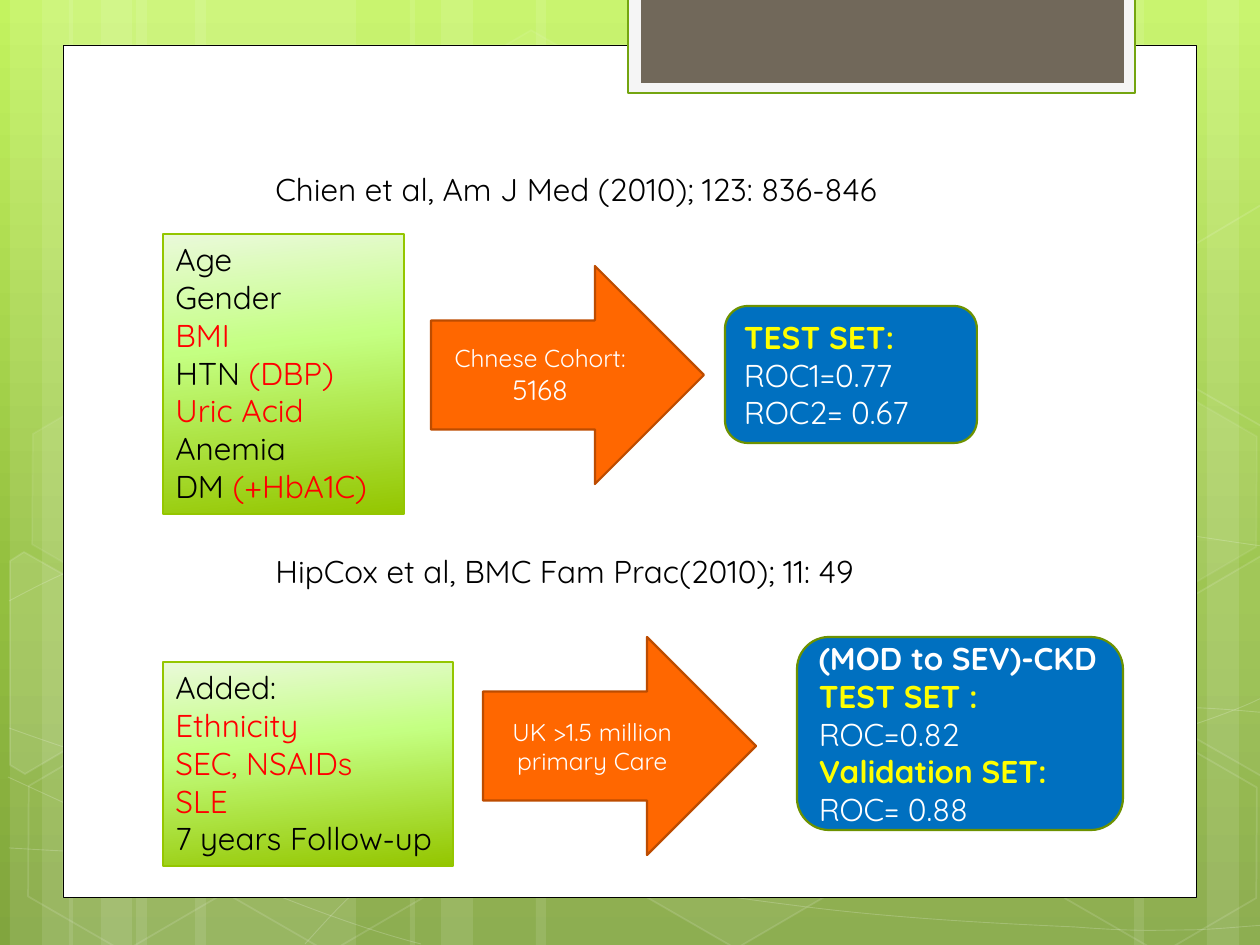
from lxml import etree
from pptx import Presentation
from pptx.dml.color import RGBColor
from pptx.enum.shapes import MSO_SHAPE
from pptx.enum.text import MSO_ANCHOR, MSO_AUTO_SIZE, PP_ALIGN
from pptx.oxml.ns import qn
from pptx.util import Pt

RECT, HEXAGON = MSO_SHAPE.RECTANGLE, MSO_SHAPE.HEXAGON
ARROW, ROUNDED = MSO_SHAPE.RIGHT_ARROW, MSO_SHAPE.ROUNDED_RECTANGLE
TOP, MIDDLE = MSO_ANCHOR.TOP, MSO_ANCHOR.MIDDLE
LEFT, CENTER = PP_ALIGN.LEFT, PP_ALIGN.CENTER
GROW = MSO_AUTO_SIZE.SHAPE_TO_FIT_TEXT

WHITE = RGBColor(0xFF, 0xFF, 0xFF)
BLACK = RGBColor(0x00, 0x00, 0x00)
RED = RGBColor(0xFF, 0x00, 0x00)
YELLOW = RGBColor(0xFF, 0xFF, 0x00)
BLUE = RGBColor(0x00, 0x70, 0xC0)
ORANGE = RGBColor(0xFF, 0x67, 0x00)
RUST = RGBColor(0xBD, 0x4C, 0x00)
LIME = RGBColor(0x94, 0xC6, 0x00)
OLIVE = RGBColor(0x6D, 0x92, 0x00)
GREEN = RGBColor(0x74, 0xA5, 0x10)
TAUPE = RGBColor(0x71, 0x68, 0x5A)
PALE = RGBColor(0xF5, 0xF5, 0xF5)
BACK_STOPS = [(0, "C3F35F"), (62, "93BF3F"), (100, "81A53E")]
BOX_STOPS = [(0, "EAF9DA"), (40, "C4FF82"), (100, "94C600")]
PX = 914400 / 126
FONT = "Quicksand"

prs = Presentation()
prs.slide_width, prs.slide_height = round(1260 * PX), round(945 * PX)
s = prs.slides.add_slide(prs.slide_layouts[6])


def paint(sp, fill=None, line=None, width=1, fill_alpha=100, line_alpha=100):
    sp.shadow.inherit = False
    for part, color, alpha in ((sp.fill, fill, fill_alpha), (sp.line.fill, line, line_alpha)):
        if color is None or alpha == 0:
            part.background()
            continue
        part.solid()
        part.fore_color.rgb = color
        if alpha < 100:
            clr = part._xPr.find(".//" + qn("a:srgbClr"))
            etree.SubElement(clr, qn("a:alpha"), val=str(alpha * 1000))
    if line is not None:
        sp.line.width = Pt(width)


def grade(fill, stops, angle):
    fill.gradient()
    grad = fill._xPr.find(qn("a:gradFill"))
    gs_list = grad.find(qn("a:gsLst"))
    for gs in list(gs_list):
        gs_list.remove(gs)
    for pos, color in stops:
        gs = etree.SubElement(gs_list, qn("a:gs"), pos=str(pos * 1000))
        etree.SubElement(gs, qn("a:srgbClr"), val=color)
    grad.find(qn("a:lin")).set("ang", str(angle * 60000))


grade(s.background.fill, BACK_STOPS, 90)

bands = [(136, 220), (10, 63), (42, 105), (195, 220), (69, 63), (101, 105),
         (924, 220), (1207, 63), (1134, 105), (536, 388), (410, 63), (441, 105)]
for x, w in bands:
    sp = s.shapes.add_shape(RECT, round(x * PX), 0, round(w * PX), prs.slide_height)
    paint(sp, WHITE, fill_alpha=10)

curves = [
    [(9, 848), (77, 852, 145, 856, 239, 854), (334, 853, 451, 851, 577, 838),
     (703, 825, 882, 801, 998, 777), (1113, 753, 1231, 716, 1269, 694)],
    [(9, 601), (45, 582, 82, 562, 152, 543), (224, 524, 326, 496, 437, 488),
     (549, 479, 685, 478, 824, 488), (963, 498, 1193, 537, 1269, 547)],
    [(8, 777), (160, 847, 311, 916, 421, 944)],
    [(9, 728), (48, 742, 88, 756, 161, 776), (234, 795, 344, 827, 450, 848),
     (554, 869, 687, 892, 791, 905), (896, 919, 1008, 924, 1075, 927),
     (1140, 932, 1158, 930, 1191, 930), (1223, 929, 1246, 926, 1269, 925)],
    [(305, 944), (328, 919, 350, 893, 381, 871), (411, 848, 454, 823, 489, 805),
     (524, 788, 546, 780, 592, 767), (638, 754, 722, 737, 766, 728),
     (811, 720, 818, 720, 857, 717), (896, 713, 958, 709, 1000, 708),
     (1045, 707, 1116, 708, 1116, 708), (1201, 708),
     (1223, 709, 1245, 711, 1256, 712), (1268, 713, 1264, 712, 1268, 713)],
]
for start, *segments in curves:
    fb = s.shapes.build_freeform(*start, scale=PX)
    for seg in segments:
        fb.add_line_segments(list(zip(seg[::2], seg[1::2])), close=False)
    sp = fb.convert_to_shape()
    paint(sp, None, WHITE, 0.5, line_alpha=20)
    steps = iter(sp._element.findall(".//" + qn("a:lnTo")))
    for seg in segments:
        group = [next(steps) for _ in seg[::2]]
        if len(group) == 3:
            bezier = etree.Element(qn("a:cubicBezTo"))
            group[0].addprevious(bezier)
            for step in group:
                bezier.append(step[0])
                step.getparent().remove(step)

hexagons = [(421, 45, 4, 8), (626, 742, 6, 12), (14, 745, 0, 12), (18, 393, 7, 8),
            (219, 746, 0, 12), (949, 571, 10, 12), (1051, 747, 0, 12), (1051, 396, 7, 8)]
for x, y, fill_alpha, line_alpha in hexagons:
    sp = s.shapes.add_shape(HEXAGON, *(round(v * PX) for v in (x, y, 220, 192)))
    sp.adjustments[0] = 0.285
    sp.rotation = 30
    paint(sp, WHITE, WHITE, 1, fill_alpha, line_alpha)

cut_hexagons = [
    (10, [(10, 561), (24, 552), (121, 607), (120, 718), (25, 774), (10, 765)]),
    (4, [(1167, 611), (1261, 556), (1271, 562), (1271, 772), (1263, 777), (1167, 722)]),
    (0, [(1167, 261), (1261, 205), (1273, 212), (1271, 422), (1263, 427), (1167, 372)]),
]
for fill_alpha, points in cut_hexagons:
    fb = s.shapes.build_freeform(*points[0], scale=PX)
    fb.add_line_segments(points[1:])
    paint(fb.convert_to_shape(), WHITE, WHITE, 1, fill_alpha, 12)

panels = [((63, 45, 1134, 853), WHITE, BLACK, 0.5),
          ((628, -3, 507, 96), PALE, GREEN, 1.25),
          ((641, -3, 483, 86), TAUPE, None, 0)]
for box, fill, line, width in panels:
    sp = s.shapes.add_shape(RECT, *(round(v * PX) for v in box))
    paint(sp, fill, line, width)

citations = [(164, 678, "Chien et al, Am J Med (2010); 123: 836-846"),
             (546, 660, "HipCox et al, BMC Fam Prac(2010); 11: 49")]
for y, w, text in citations:
    tf = s.shapes.add_textbox(*(round(v * PX) for v in (263, y, w, 51))).text_frame
    tf.word_wrap = False
    tf.auto_size = GROW
    p = tf.paragraphs[0]
    p.text = text
    p.font.name, p.font.size, p.font.color.rgb = FONT, Pt(18), BLACK

blocks = [
    (RECT, (163, 234, 241, 280), [
        [("Age", BLACK)], [("Gender", BLACK)], [("BMI", RED)],
        [("HTN ", BLACK), ("(DBP)", RED)], [("Uric Acid", RED)],
        [("Anemia", BLACK)], [("DM ", BLACK), ("(+HbA1C)", RED)]]),
    (ARROW, (431, 266, 273, 218), [[("Chnese Cohort: ", WHITE, 14), ("5168", WHITE, 16)]]),
    (ROUNDED, (725, 306, 252, 137), [
        [("TEST SET:", YELLOW)], [("ROC1=0.77", WHITE)], [("ROC2= 0.67", WHITE)]]),
    (RECT, (163, 662, 290, 204), [
        [("Added:", BLACK)], [("Ethnicity", RED)], [("SEC, NSAIDs", RED)],
        [("SLE", RED)], [("7 years Follow-up", BLACK)]]),
    (ARROW, (483, 637, 273, 218), [[("UK >1.5 million primary Care", WHITE, 14)]]),
    (ROUNDED, (797, 637, 326, 193), [
        [("(MOD to SEV)-CKD", WHITE)],
        [("TEST SET : ", YELLOW), ("ROC=0.82", WHITE)],
        [("Validation SET: ", YELLOW), ("ROC= 0.88", WHITE)]]),
]
for kind, box, lines in blocks:
    sp = s.shapes.add_shape(kind, *(round(v * PX) for v in box))
    tf = sp.text_frame
    tf.word_wrap = kind != RECT
    tf.vertical_anchor = TOP if kind == RECT else MIDDLE
    if kind == RECT:
        paint(sp, None, LIME, 0.75)
        grade(sp.fill, BOX_STOPS, 84)
        tf.auto_size = GROW
    elif kind == ARROW:
        paint(sp, ORANGE, RUST, 1.25)
    else:
        paint(sp, BLUE, OLIVE, 1.25)
    for i, runs in enumerate(lines):
        p = tf.add_paragraph() if i else tf.paragraphs[0]
        p.alignment = CENTER if kind == ARROW else LEFT
        p.font.name, p.font.size = FONT, Pt(18)
        for text, color, *size in runs:
            r = p.add_run()
            r.text = text
            r.font.color.rgb = color
            if size:
                r.font.size = Pt(size[0])
            if color == YELLOW or text.startswith("(MOD"):
                r.font.bold = True

prs.save("out.pptx")
